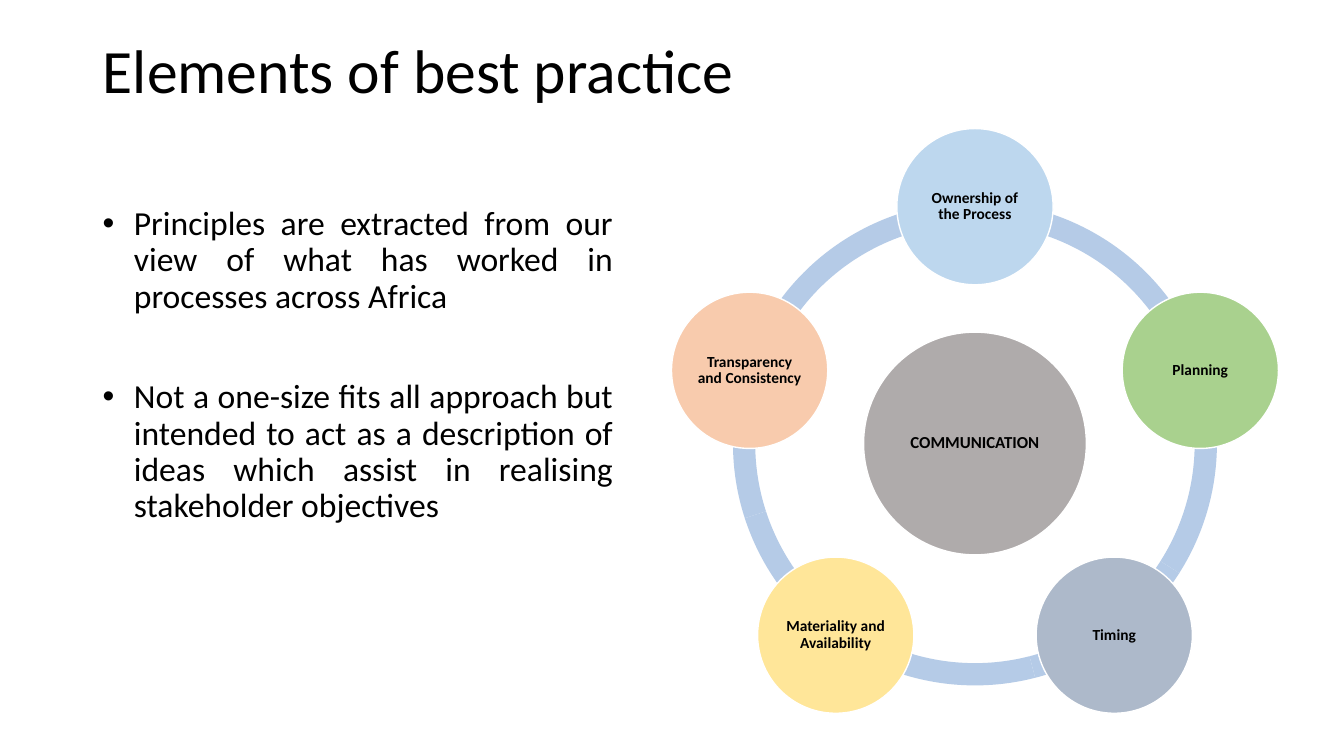
import math
from dataclasses import dataclass
from lxml import etree
from pptx import Presentation
from pptx import util as u
from pptx.dml.color import RGBColor
from pptx.enum import shapes, text
from pptx.oxml import ns


@dataclass(frozen=True)
class Theme:
    font: str = "Calibri"
    ink: str = "000000"
    outline: str = "FFFFFF"
    ring: str = "B5CBE7"
    hub: str = "AFABAB"
    title_size: int = 44
    body_size: int = 24
    hub_size: int = 12
    element_size: int = 11


theme = Theme()


def style_text(para, size, align, bold=False):
    para.alignment = align
    para.line_spacing = 0.9
    for span in para.runs:
        span.font.name = theme.font
        span.font.size = u.Pt(size)
        span.font.bold = bold
        span.font.color.rgb = RGBColor.from_string(theme.ink)


def add_circle(center_x, center_y, diameter, color, label, size):
    circle = page.shapes.add_shape(
        shapes.MSO_SHAPE.OVAL,
        u.Inches(center_x - diameter / 2), u.Inches(center_y - diameter / 2),
        u.Inches(diameter), u.Inches(diameter))
    circle.shadow.inherit = False
    circle.fill.solid()
    circle.fill.fore_color.rgb = RGBColor.from_string(color)
    circle.line.color.rgb = RGBColor.from_string(theme.outline)
    circle.line.width = u.Pt(1)
    frame = circle.text_frame
    frame.word_wrap = True
    frame.vertical_anchor = text.MSO_ANCHOR.MIDDLE
    frame.margin_left = frame.margin_right = u.Inches(0.02)
    frame.margin_top = frame.margin_bottom = u.Inches(0.02)
    frame.text = label
    style_text(frame.paragraphs[0], size, text.PP_ALIGN.CENTER, bold=True)


deck = Presentation()
deck.slide_width = u.Inches(13.33)
deck.slide_height = u.Inches(7.5)
page = deck.slides.add_slide(deck.slide_layouts[5])

title = page.shapes.title
title.left, title.top = u.Inches(0.92), u.Inches(0)
title.width, title.height = u.Inches(11.5), u.Inches(1.45)
title.text_frame.text = "Elements of best practice"
title.text_frame.vertical_anchor = text.MSO_ANCHOR.MIDDLE
style_text(title.text_frame.paragraphs[0], theme.title_size, text.PP_ALIGN.LEFT)

principles = [
    "Principles are extracted from our view of what has worked in processes across Africa",
    "Not a one-size fits all approach but intended to act as a description of ideas "
    "which assist in realising stakeholder objectives",
]
box = page.shapes.add_textbox(u.Inches(0.92), u.Inches(2), u.Inches(5.26), u.Inches(4.76))
box.text_frame.word_wrap = True
box.text_frame.text = "\n".join(principles)
for index, para in enumerate(box.text_frame.paragraphs):
    properties = para._p.get_or_add_pPr()
    properties.set("marL", str(u.Inches(0.31)))
    properties.set("indent", str(-u.Inches(0.31)))
    etree.SubElement(properties, ns.qn("a:buFont")).set("typeface", "Arial")
    etree.SubElement(properties, ns.qn("a:buChar")).set("char", "•")
    style_text(para, theme.body_size, text.PP_ALIGN.JUSTIFY)
    if index:
        para.space_before = u.Pt(46)

center_x, center_y = 9.67, 4.4
ring_diameter = 4.8
arc_bounds = [32.4, 75.6, 118.8, 162, 205.2]
for index, start in enumerate(arc_bounds):
    end = arc_bounds[(index + 1) % len(arc_bounds)]
    arc = page.shapes.add_shape(
        shapes.MSO_SHAPE.BLOCK_ARC,
        u.Inches(center_x - ring_diameter / 2), u.Inches(center_y - ring_diameter / 2),
        u.Inches(ring_diameter), u.Inches(ring_diameter))
    arc.shadow.inherit = False
    arc.adjustments[0] = start * 0.6
    arc.adjustments[1] = end * 0.6
    arc.adjustments[2] = 0.046
    arc.fill.solid()
    arc.fill.fore_color.rgb = RGBColor.from_string(theme.ring)
    arc.line.fill.background()

add_circle(center_x, center_y, 2.21, theme.hub, "COMMUNICATION", theme.hub_size)

elements = [
    ("Ownership of the Process", "BDD7EE"),
    ("Planning", "A9D18E"),
    ("Timing", "ADB9CA"),
    ("Materiality and Availability", "FFE699"),
    ("Transparency and Consistency", "F8CBAD"),
]
orbit = 2.35
for index, (label, color) in enumerate(elements):
    angle = math.tau * index / len(elements)
    add_circle(center_x + orbit * math.sin(angle), center_y - orbit * math.cos(angle),
               1.55, color, label, theme.element_size)

deck.save("out.pptx")
